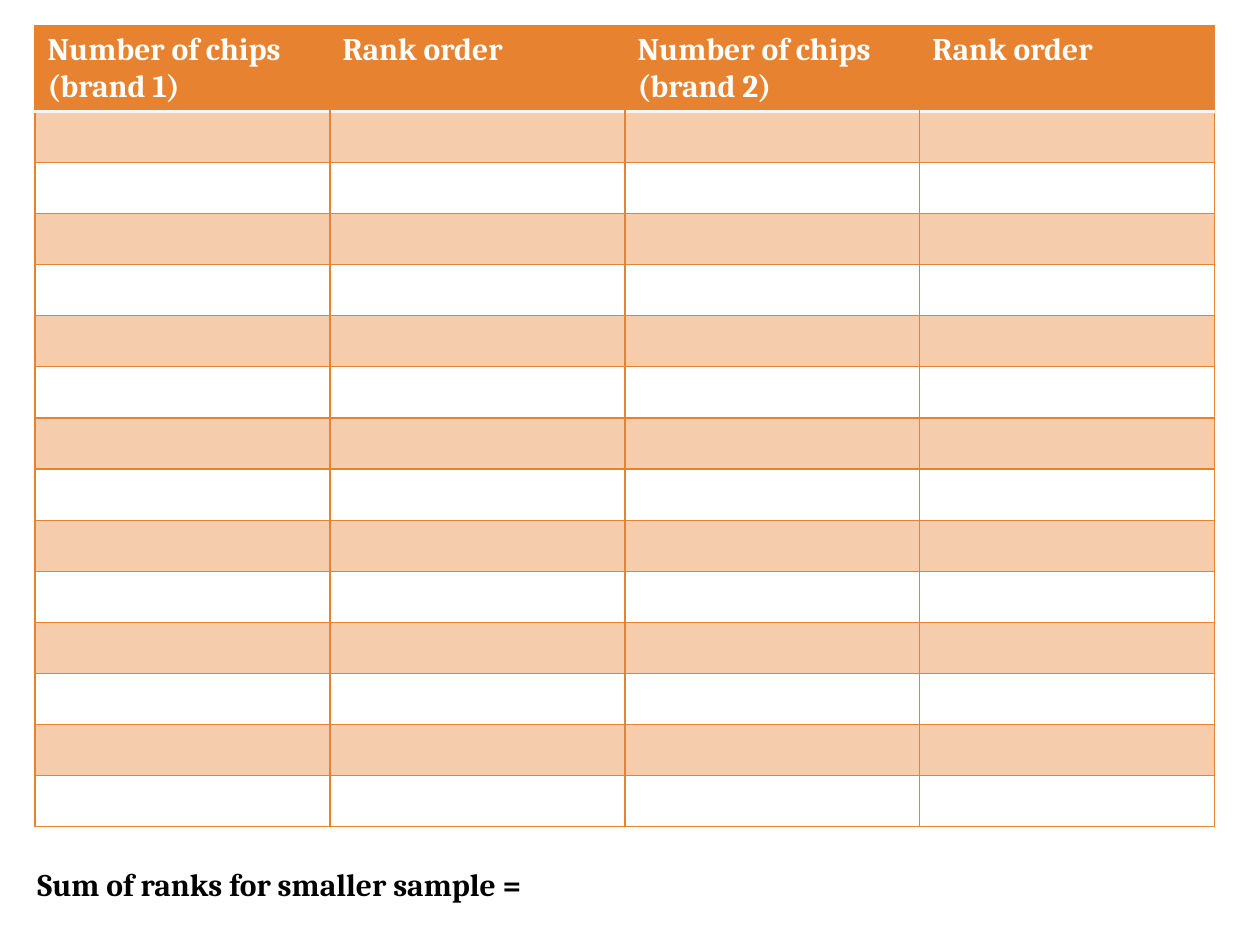
from lxml import etree
from pptx import Presentation
from pptx.dml.color import RGBColor
from pptx.enum.text import MSO_AUTO_SIZE
from pptx.oxml.ns import qn
from pptx.util import Pt

PX = 914400 // 126
FIT_SHAPE = MSO_AUTO_SIZE.SHAPE_TO_FIT_TEXT

ORANGE = RGBColor(0xE6, 0x82, 0x30)
PALE = RGBColor(0xF4, 0xF4, 0xF4)
WHITE = RGBColor(0xFF, 0xFF, 0xFF)
BLACK = RGBColor(0x00, 0x00, 0x00)

HEADERS = ["Number of chips (brand 1)", "Rank order",
           "Number of chips (brand 2)", "Rank order"]
BODY_ROWS = 14
COL_W, HEADER_H, ROW_H = 295, 85, 51
BAND_OPACITY = 40
THIN, THICK = Pt(0.75), Pt(1.5)


class SlideBuilder:
    font = {"name": "Cambria", "size": Pt(18), "bold": True}

    def __init__(self, slide):
        self.slide = slide

    def set_text(self, tf, text, color):
        p = tf.paragraphs[0]
        p.text = text
        for key, value in self.font.items():
            setattr(p.font, key, value)
        p.font.color.rgb = color

    def text(self, x, y, w, h, text, color):
        sp = self.slide.shapes.add_textbox(x * PX, y * PX, w * PX, h * PX)
        sp.text_frame.word_wrap = True
        sp.text_frame.auto_size = FIT_SHAPE
        self.set_text(sp.text_frame, text, color)

    def borders(self, cell, **sides):
        """Set sides L, R, T, B to (colour, width), or to None for no line."""
        tcPr = cell._tc.get_or_add_tcPr()
        for side in "LRTB":
            ln = etree.SubElement(tcPr, qn(f"a:ln{side}"))
            if sides[side] is None:
                etree.SubElement(ln, qn("a:noFill"))
                continue
            color, width = sides[side]
            ln.set("w", str(int(width)))
            fill = etree.SubElement(ln, qn("a:solidFill"))
            etree.SubElement(fill, qn("a:srgbClr"), val=str(color))

    def fill(self, cell, color, opacity=100):
        cell.fill.solid()
        cell.fill.fore_color.rgb = color
        if opacity < 100:
            clr = cell._tc.tcPr.find(f"{qn('a:solidFill')}/{qn('a:srgbClr')}")
            etree.SubElement(clr, qn("a:alpha"), val=str(opacity * 1000))

    def table(self, x, y, headers, body_rows):
        cols = len(headers)
        height = HEADER_H + body_rows * ROW_H
        table = self.slide.shapes.add_table(
            body_rows + 1, cols, x * PX, y * PX,
            cols * COL_W * PX, height * PX).table
        table.first_row = table.horz_banding = False
        for col in table.columns:
            col.width = COL_W * PX
        for i, row in enumerate(table.rows):
            row.height = (ROW_H if i else HEADER_H) * PX
        grid, rule = (ORANGE, THIN), (PALE, THICK)
        for c, header in enumerate(headers):
            cell = table.cell(0, c)
            self.borders(cell, L=grid if c == 0 else None,
                         R=grid if c == cols - 1 else None, T=grid, B=rule)
            self.fill(cell, ORANGE)
            self.set_text(cell.text_frame, header, WHITE)
            for r in range(1, body_rows + 1):
                cell = table.cell(r, c)
                self.borders(cell, L=grid, R=grid,
                             T=rule if r == 1 else grid, B=grid)
                if r % 2:
                    self.fill(cell, ORANGE, BAND_OPACITY)
                else:
                    cell.fill.background()


def main():
    prs = Presentation()
    prs.slide_width, prs.slide_height = 1260 * PX, 945 * PX
    s = SlideBuilder(prs.slides.add_slide(prs.slide_layouts[6]))
    s.table(35, 26, HEADERS, BODY_ROWS)
    s.text(25, 859, 1081, 51, "Sum of ranks for smaller sample =", BLACK)
    prs.save("out.pptx")


if __name__ == "__main__":
    main()
